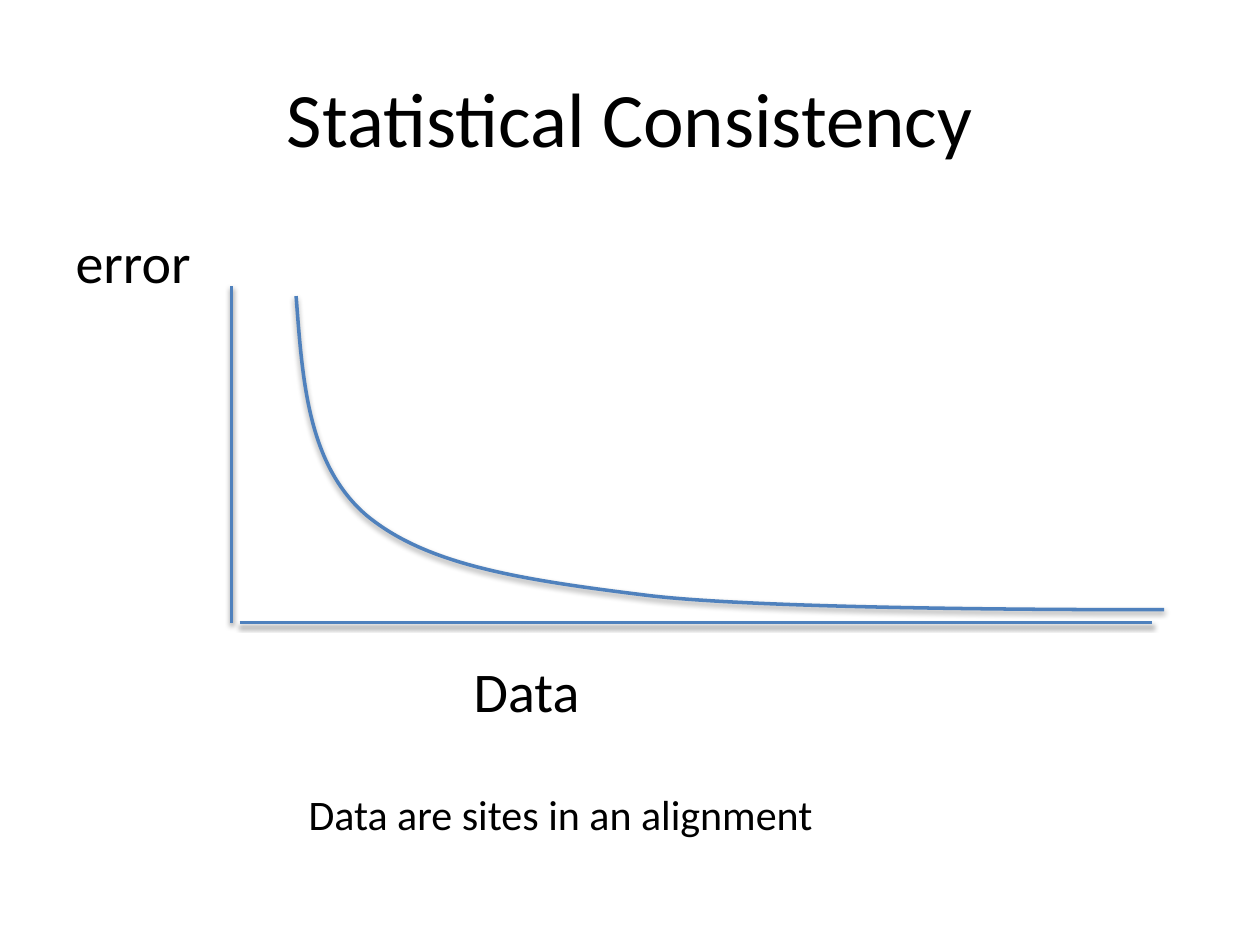
from lxml.etree import SubElement
from pptx import Presentation
from pptx.dml.color import RGBColor
from pptx.enum.shapes import MSO_CONNECTOR
from pptx.enum.text import MSO_ANCHOR, MSO_AUTO_SIZE, PP_ALIGN
from pptx.oxml.ns import qn
from pptx.util import Cm, Pt

FONT = "Calibri"
BLACK = "000000"
BLUE = "4F81BD"

# Positions in centimetres from the top left corner of the plot
CURVE_START = (1.3, 0.2)
CURVE_SEGMENTS = [  # first control point, second control point, end
    [(1.43, 1.9), (1.53, 3.6), (2.72, 4.62)],
    [(3.92, 5.61), (5.74, 5.91), (8.44, 6.24)],
    [(11.1, 6.55), (18.8, 6.52), (18.8, 6.52)],
]


def color(hex_code):
    return RGBColor.from_string(hex_code)


def place(shape, left, top, width, height):
    shape.left, shape.top = Cm(left), Cm(top)
    shape.width, shape.height = Cm(width), Cm(height)


def write(shape, text, size):
    """Set one paragraph of formatted text and return the paragraph."""
    shape.text_frame.text = text
    paragraph = shape.text_frame.paragraphs[0]
    font = paragraph.runs[0].font
    font.name, font.size = FONT, Pt(size)
    font.color.rgb = color(BLACK)
    return paragraph


def add_title(slide, text, box):
    title = slide.shapes.title
    place(title, *box)
    title.text_frame.vertical_anchor = MSO_ANCHOR.MIDDLE
    write(title, text, 44).alignment = PP_ALIGN.CENTER


def add_body(slide, text, box):
    body = slide.placeholders[1]
    place(body, *box)
    properties = write(body, text, 32)._p.get_or_add_pPr()
    properties.set("marL", "0")
    properties.set("indent", "0")
    SubElement(properties, qn("a:buNone"))


def add_label(slide, text, size, box, wrap):
    label = slide.shapes.add_textbox(*map(Cm, box))
    label.text_frame.word_wrap = wrap
    label.text_frame.auto_size = MSO_AUTO_SIZE.SHAPE_TO_FIT_TEXT
    write(label, text, size)


def style_line(shape):
    """Give a line its colour, width and soft shadow below."""
    shape.line.color.rgb = color(BLUE)
    shape.line.width = Pt(2)
    effects = SubElement(shape._element.spPr, qn("a:effectLst"))
    shadow = SubElement(effects, qn("a:outerShdw"), blurRad=str(Pt(3.1)),
                        dist=str(Pt(1.6)), dir="5400000", rotWithShape="0")
    shade = SubElement(shadow, qn("a:srgbClr"), val=BLACK)
    SubElement(shade, qn("a:alpha"), val="38000")


def add_axis(slide, start, end):
    axis = slide.shapes.add_connector(
        MSO_CONNECTOR.STRAIGHT, *map(Cm, (*start, *end)))
    style_line(axis)


def add_curve(slide, left, top):
    def position(point):
        return Cm(left + point[0]), Cm(top + point[1])

    origin = position(CURVE_START)
    builder = slide.shapes.build_freeform(*origin)
    ends = [position(segment[-1]) for segment in CURVE_SEGMENTS]
    builder.add_line_segments(ends, close=False)
    curve = builder.convert_to_shape()
    curve.fill.background()
    style_line(curve)

    # The builder draws straight segments; turn each into a Bézier segment
    straight_segments = list(curve._element.iter(qn("a:lnTo")))
    for straight, segment in zip(straight_segments, CURVE_SEGMENTS):
        bezier = SubElement(straight.getparent(), qn("a:cubicBezTo"))
        for point in segment:
            x, y = position(point)
            SubElement(bezier, qn("a:pt"),
                       x=str(x - origin[0]), y=str(y - origin[1]))
        straight.getparent().remove(straight)


def add_plot(slide, left, top, width, height):
    bottom = top + height
    axis_gap = 0.16
    add_axis(slide, (left, top), (left, bottom))
    add_axis(slide, (left + axis_gap, bottom), (left + width, bottom))
    add_label(slide, "Data", 32, (left + 4.63, bottom + 0.56, 6.5, 1.63), True)
    add_curve(slide, left, top)


def main():
    presentation = Presentation()
    presentation.slide_width, presentation.slide_height = Cm(25.4), Cm(19.05)
    slide = presentation.slides.add_slide(presentation.slide_layouts[1])
    add_title(slide, "Statistical Consistency", (1.27, 0.76, 22.86, 3.18))
    add_body(slide, "error", (1.27, 4.45, 22.86, 12.57))
    add_plot(slide, 4.67, 5.77, 18.55, 6.78)
    add_label(slide, "Data are sites in an alignment", 24,
              (5.97, 15.77, 11.02, 1.27), False)
    presentation.save("out.pptx")


if __name__ == "__main__":
    main()
